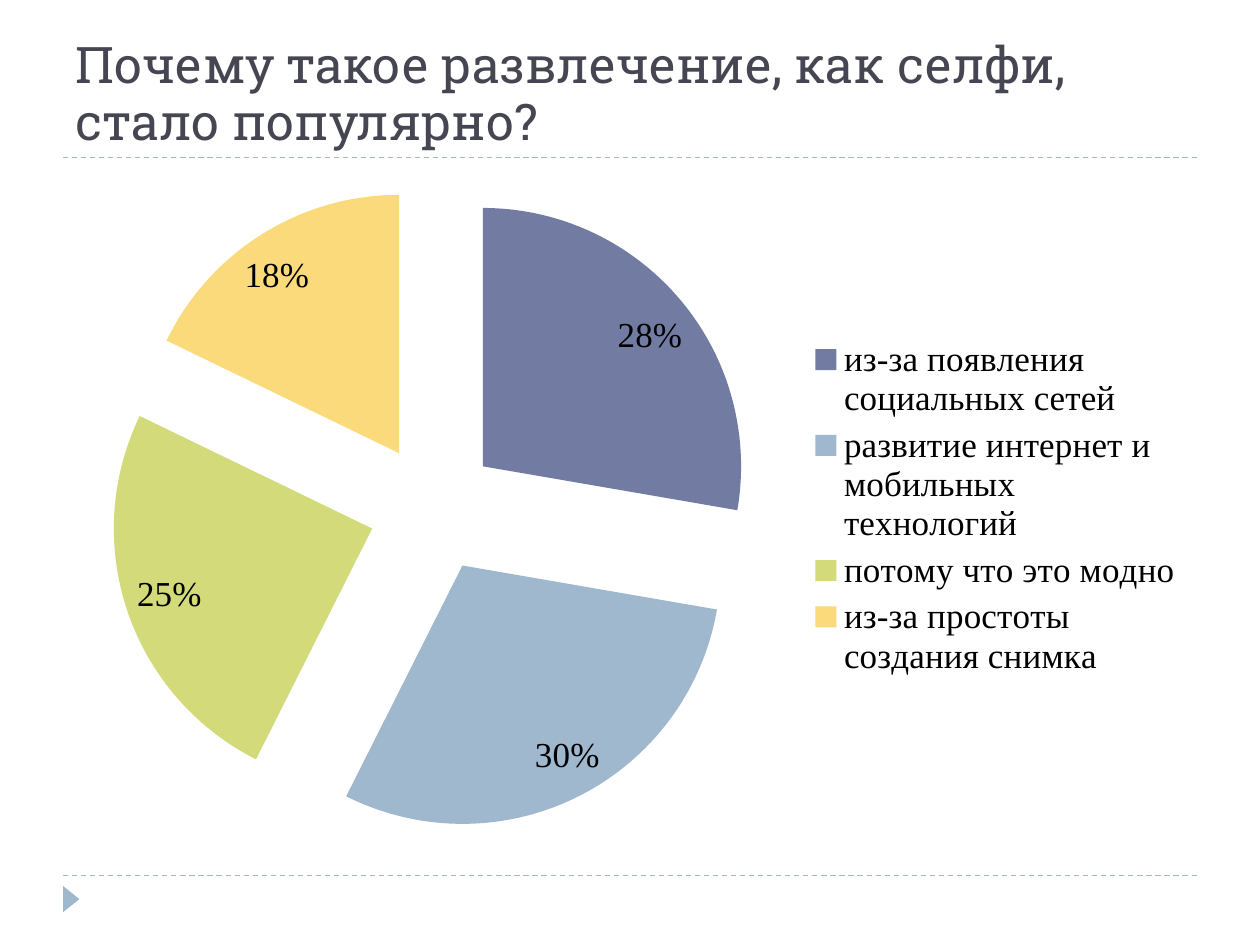
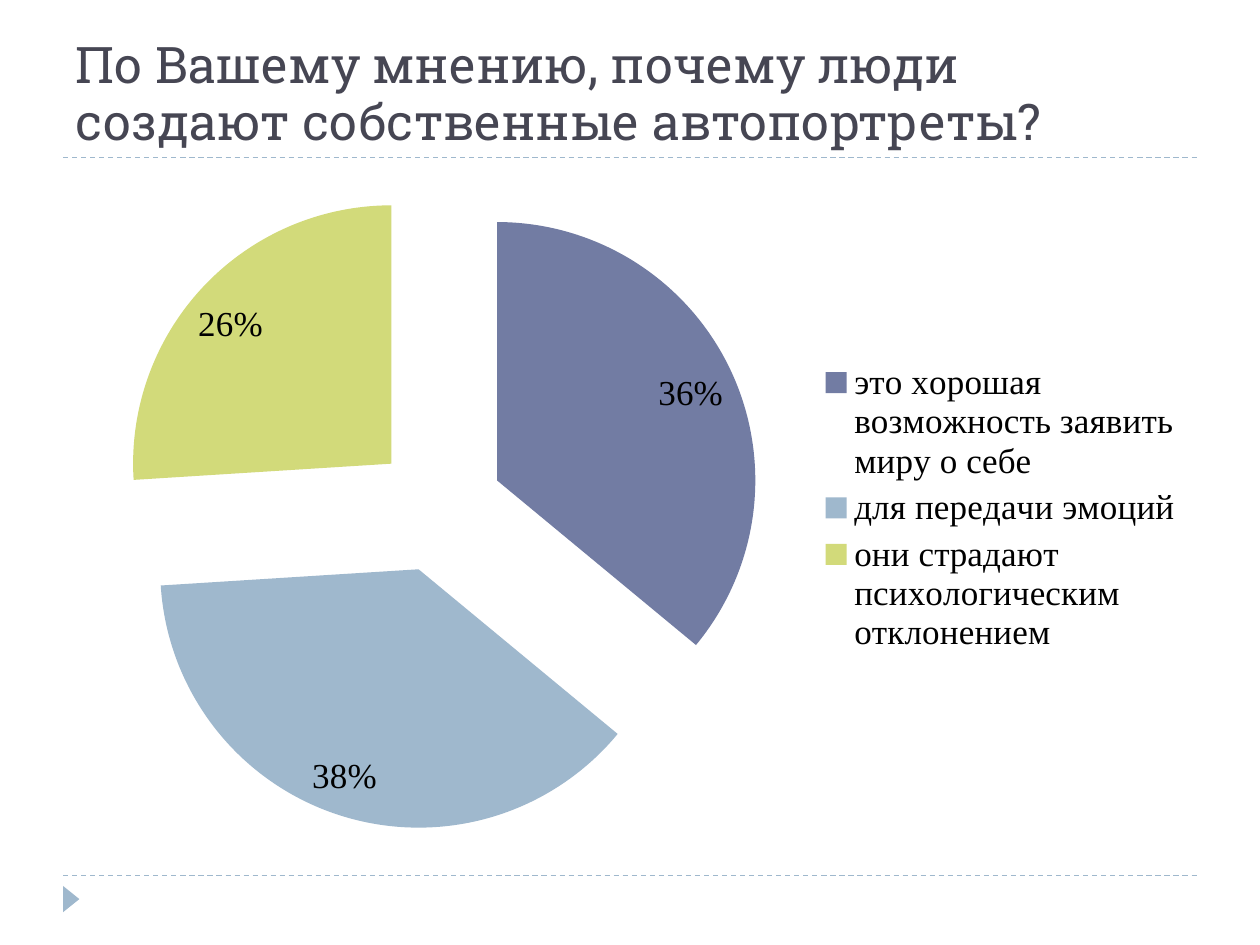
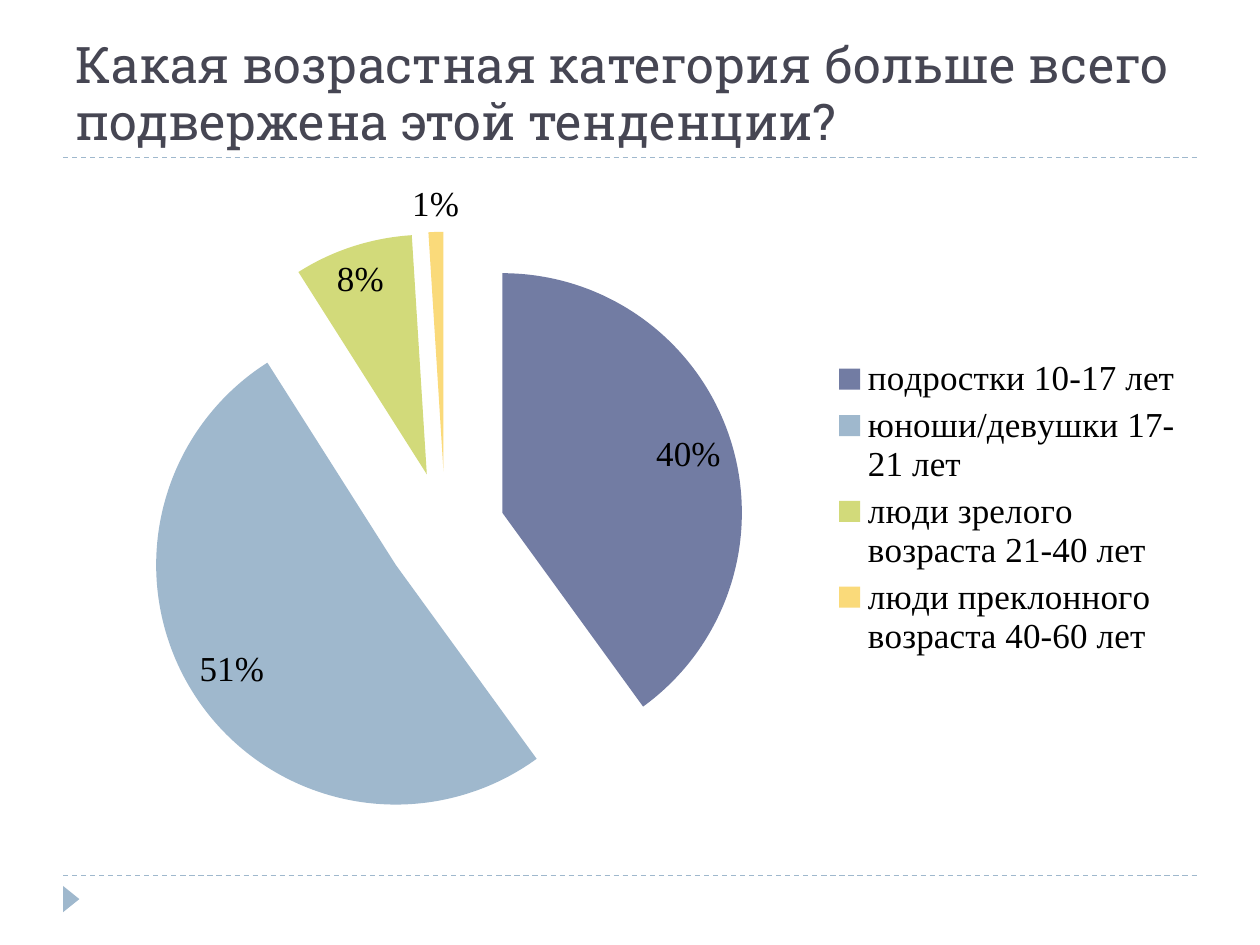
from dataclasses import dataclass

from lxml.etree import SubElement
from pptx import Presentation
from pptx.chart.data import CategoryChartData
from pptx.dml.color import RGBColor
from pptx.enum.chart import XL_CHART_TYPE, XL_LABEL_POSITION, XL_LEGEND_POSITION
from pptx.enum.dml import MSO_LINE
from pptx.enum.shapes import MSO_CONNECTOR, MSO_SHAPE
from pptx.enum.text import MSO_ANCHOR, MSO_AUTO_SIZE, PP_ALIGN
from pptx.oxml.ns import qn
from pptx.util import Cm, Pt

SLIDES = [
    ("Почему такое развлечение, как селфи, стало популярно?", [
        ("из-за появления социальных сетей", 28),
        ("развитие интернет и мобильных технологий", 30),
        ("потому что это модно", 25),
        ("из-за простоты создания снимка", 18),
    ]),
    ("По Вашему мнению, почему люди создают собственные автопортреты?", [
        ("это хорошая возможность заявить миру о себе", 36),
        ("для передачи эмоций", 38),
        ("они страдают психологическим отклонением", 26),
    ]),
    ("Какая возрастная категория больше всего подвержена этой тенденции?", [
        ("подростки 10-17 лет", 40),
        ("юноши/девушки 17-21 лет", 51),
        ("люди зрелого возраста 21-40 лет", 8),
        ("люди преклонного возраста 40-60 лет", 1),
    ]),
]


@dataclass(frozen=True)
class Theme:
    title_color: str = "464653"
    accent: str = "9FB8CD"
    text: str = "000000"
    slices: tuple = ("727CA3", "9FB8CD", "D2DA7A", "FADA7A")
    title_font: str = "Roboto Slab"
    chart_font: str = "Calibri"
    label_font: str = "Times New Roman"
    title_size: float = 28.8
    chart_size: float = 18
    label_size: float = 20


THEME = Theme()
LEFT, WIDTH = Cm(1.27), Cm(22.86)
TITLE_TOP, TITLE_HEIGHT = Cm(0.43), Cm(2.75)
CHART_TOP, CHART_HEIGHT = Cm(3.38), Cm(13.72)
RULES = (Cm(17.65), TITLE_TOP + TITLE_HEIGHT)
MARKER = (Cm(1.17), Cm(17.96), Cm(0.53), Cm(0.33))
EXPLOSION = 25


def set_all(obj, values):
    for name, value in values.items():
        setattr(obj, name, value)


def set_font(font, name, size, color):
    set_all(font, {"name": name, "size": Pt(size), "bold": False})
    font.color.rgb = RGBColor.from_string(color)


def add_frame(s):
    accent = RGBColor.from_string(THEME.accent)
    for y in RULES:
        rule = s.shapes.add_connector(MSO_CONNECTOR.STRAIGHT, LEFT, y, LEFT + WIDTH, y)
        set_all(rule.line, {"width": Pt(0.75), "dash_style": MSO_LINE.DASH})
        rule.line.color.rgb = accent
        SubElement(rule._element.spPr, qn("a:effectLst"))
    marker = s.shapes.add_shape(MSO_SHAPE.ISOSCELES_TRIANGLE, *MARKER)
    marker.rotation = 90
    marker.shadow.inherit = False
    marker.fill.solid()
    marker.fill.fore_color.rgb = accent
    marker.line.fill.background()


def add_title(s, text):
    sp = s.shapes.title
    set_all(sp, {"left": LEFT, "top": TITLE_TOP, "width": WIDTH, "height": TITLE_HEIGHT})
    tf = sp.text_frame
    set_all(tf, {"word_wrap": True, "auto_size": MSO_AUTO_SIZE.NONE,
                 "vertical_anchor": MSO_ANCHOR.BOTTOM})
    p = tf.paragraphs[0]
    set_all(p, {"alignment": PP_ALIGN.LEFT, "line_spacing": 0.93})
    r = p.add_run()
    r.text = text
    set_font(r.font, THEME.title_font, THEME.title_size, THEME.title_color)


def add_pie(s, answers):
    data = CategoryChartData()
    data.categories = [answer for answer, _ in answers]
    data.add_series("Series 1", [share for _, share in answers])
    chart = s.shapes.add_chart(
        XL_CHART_TYPE.PIE, LEFT, CHART_TOP, WIDTH, CHART_HEIGHT, data).chart
    set_all(chart, {"has_title": False, "has_legend": True})
    set_font(chart.font, THEME.chart_font, THEME.chart_size, THEME.text)
    set_all(chart.legend, {"position": XL_LEGEND_POSITION.RIGHT, "include_in_layout": False})

    plot = chart.plots[0]
    set_all(plot, {"vary_by_categories": True, "has_data_labels": True})
    labels = plot.data_labels
    set_all(labels, {"show_percentage": True, "show_value": False,
                     "number_format": "0%", "number_format_is_linked": False,
                     "position": XL_LABEL_POSITION.BEST_FIT})
    for part in (chart.legend, labels):
        set_font(part.font, THEME.label_font, THEME.label_size, THEME.text)

    series = plot.series[0]
    for i, color in enumerate(THEME.slices[:len(answers)]):
        fill = series.points[i].format.fill
        fill.solid()
        fill.fore_color.rgb = RGBColor.from_string(color)
    ser = series._element
    explosion = SubElement(ser, qn("c:explosion"), val=str(EXPLOSION))
    ser.find(qn("c:dPt")).addprevious(explosion)


def main():
    prs = Presentation()
    set_all(prs, {"slide_width": Cm(25.4), "slide_height": Cm(19.05)})
    for title, answers in SLIDES:
        s = prs.slides.add_slide(prs.slide_layouts.get_by_name("Title Only"))
        add_frame(s)
        add_title(s, title)
        add_pie(s, answers)
    prs.save("out.pptx")


if __name__ == "__main__":
    main()
